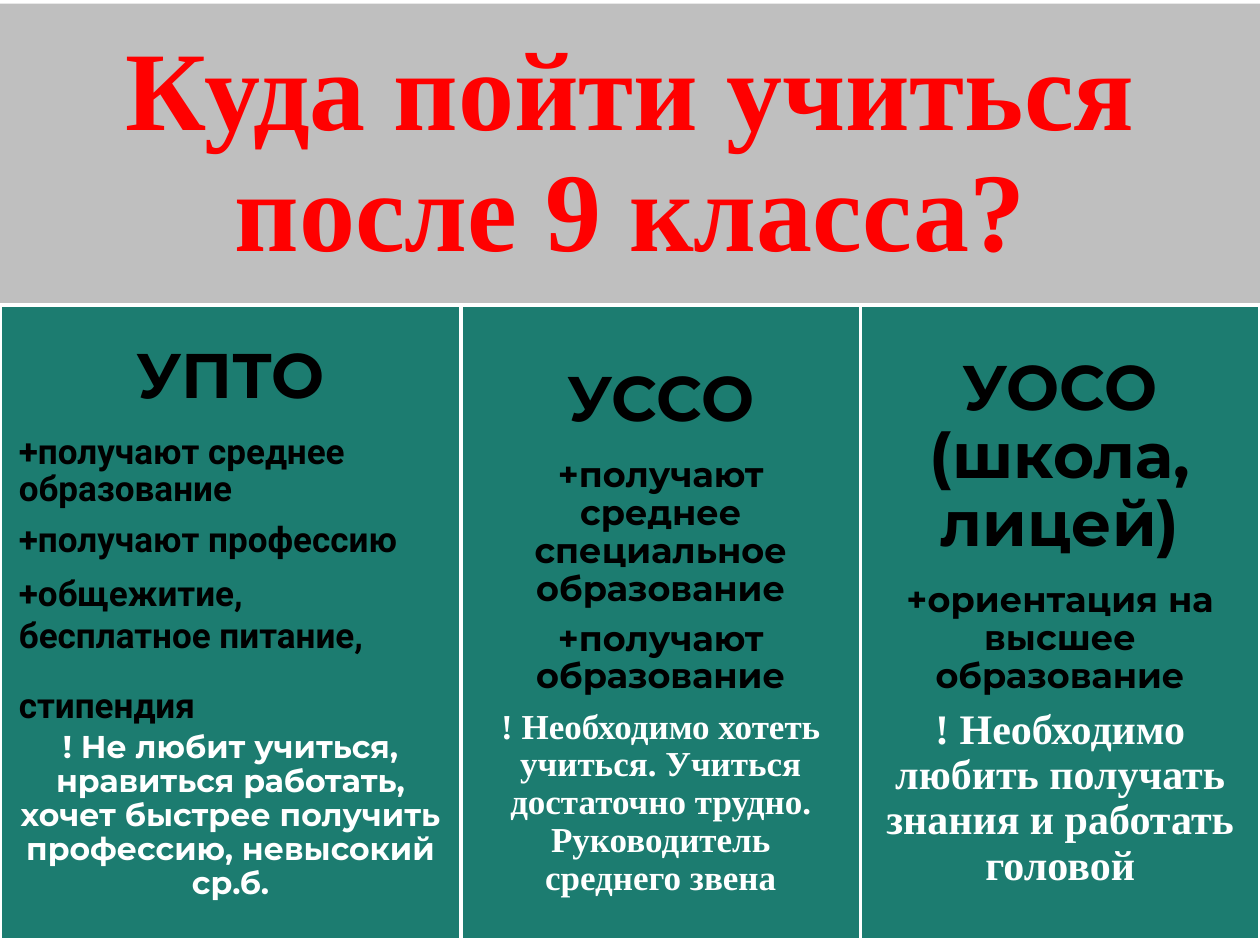
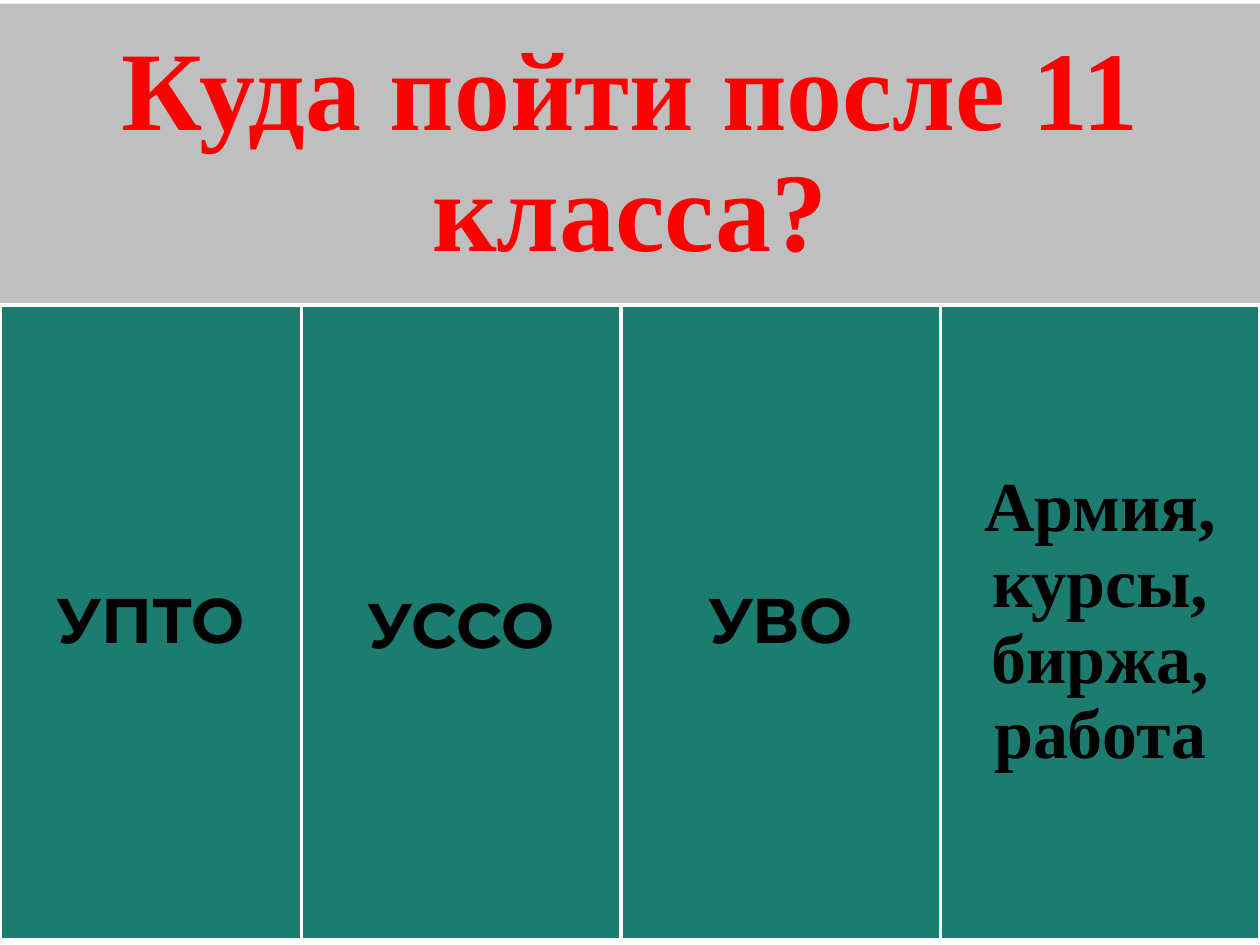
from pptx import Presentation
from pptx.dml.color import RGBColor
from pptx.enum.shapes import MSO_SHAPE
from pptx.enum.text import MSO_ANCHOR, MSO_AUTO_SIZE, PP_ALIGN
from pptx.util import Pt

COLORS = {"band": "BFBFBF", "title": "FF0000", "column": "1C7C70",
          "border": "FFFFFF", "head": "000000", "note": "FFFFFF"}
TIMES, MONT, ROBOTO = "Times New Roman", "Montserrat", "Roboto"
CENTER, LEFT = PP_ALIGN.CENTER, PP_ALIGN.LEFT
BAND_TOP, BAND_H = 2, 172.8
COL_TOP, COL_H = 174.4, 362.9


def set_frame(tf, size, extra_top=0):
    tf.word_wrap = True
    tf.auto_size = MSO_AUTO_SIZE.NONE
    tf.vertical_anchor = MSO_ANCHOR.MIDDLE
    inset = 0.3 * size
    tf.margin_left = tf.margin_right = tf.margin_bottom = Pt(inset)
    tf.margin_top = Pt(inset + extra_top)


def add_text(p, text, size, font, color, align=CENTER, tight=True):
    p.alignment = align
    p.space_before = Pt(0)
    p.line_spacing = 0.9 if tight else 1.0
    p.space_after = Pt(0.35 * size if tight else 0)
    r = p.add_run()
    r.text = text
    r.font.size = Pt(size)
    r.font.name = font
    r.font.bold = True
    r.font.color.rgb = RGBColor.from_string(COLORS[color])


slides = [
    ("Куда пойти учиться после 9 класса?", [
        (263.5, 0, [
            ("УПТО", 36, MONT, "head"),
            ("+получают среднее образование", 20, ROBOTO, "head", LEFT),
            ("+получают профессию", 20, ROBOTO, "head", LEFT),
            ("+общежитие, бесплатное питание, стипендия", 20, ROBOTO, "head", LEFT, False),
            ("! Не любит учиться, нравиться работать, хочет быстрее получить "
             "профессию, невысокий ср.б.", 18, MONT, "note")]),
        (228.2, 11.3, [
            ("УССО", 36, MONT, "head"),
            ("+получают среднее специальное образование", 20, MONT, "head"),
            ("+получают образование", 20, MONT, "head"),
            ("! Необходимо хотеть учиться. Учиться достаточно трудно. "
             "Руководитель среднего звена", 20, TIMES, "note")]),
        (228.2, 0, [
            ("УОСО (школа, лицей)", 36, MONT, "head"),
            ("+ориентация на высшее образование", 20, MONT, "head"),
            ("! Необходимо любить получать знания и работать головой",
             24, TIMES, "note")]),
    ]),
    ("Куда пойти после 11 класса?", [
        (172.2, 0, [("УПТО", 36, MONT, "head")]),
        (182.6, 5.7, [("УССО", 36, MONT, "head")]),
        (182.6, 0, [("УВО", 36, MONT, "head")]),
        (182.6, 0, [("Армия, курсы, биржа, работа", 40, TIMES, "head")]),
    ]),
]

prs = Presentation()
prs.slide_width, prs.slide_height = Pt(720), Pt(540)

for title, columns in slides:
    s = prs.slides.add_slide(prs.slide_layouts[5])
    band = s.shapes.title
    band.left, band.top, band.width, band.height = Pt(0), Pt(BAND_TOP), Pt(720), Pt(BAND_H)
    band.fill.solid()
    band.fill.fore_color.rgb = RGBColor.from_string(COLORS["band"])
    set_frame(band.text_frame, 64)
    add_text(band.text_frame.paragraphs[0], title, 64, TIMES, "title")

    left = 0
    for width, extra_top, paras in columns:
        sp = s.shapes.add_shape(MSO_SHAPE.RECTANGLE, Pt(left), Pt(COL_TOP), Pt(width), Pt(COL_H))
        sp.shadow.inherit = False
        sp.fill.solid()
        sp.fill.fore_color.rgb = RGBColor.from_string(COLORS["column"])
        sp.line.color.rgb = RGBColor.from_string(COLORS["border"])
        sp.line.width = Pt(2)
        tf = sp.text_frame
        set_frame(tf, paras[0][1], extra_top)
        for i, para in enumerate(paras):
            p = tf.add_paragraph() if i else tf.paragraphs[0]
            add_text(p, *para)
            if para[0].endswith("стипендия"):
                r = p.add_run()
                r.text = " "
                r.font.size = Pt(36)
                r.font.name = ROBOTO
        left += width

prs.save("out.pptx")
